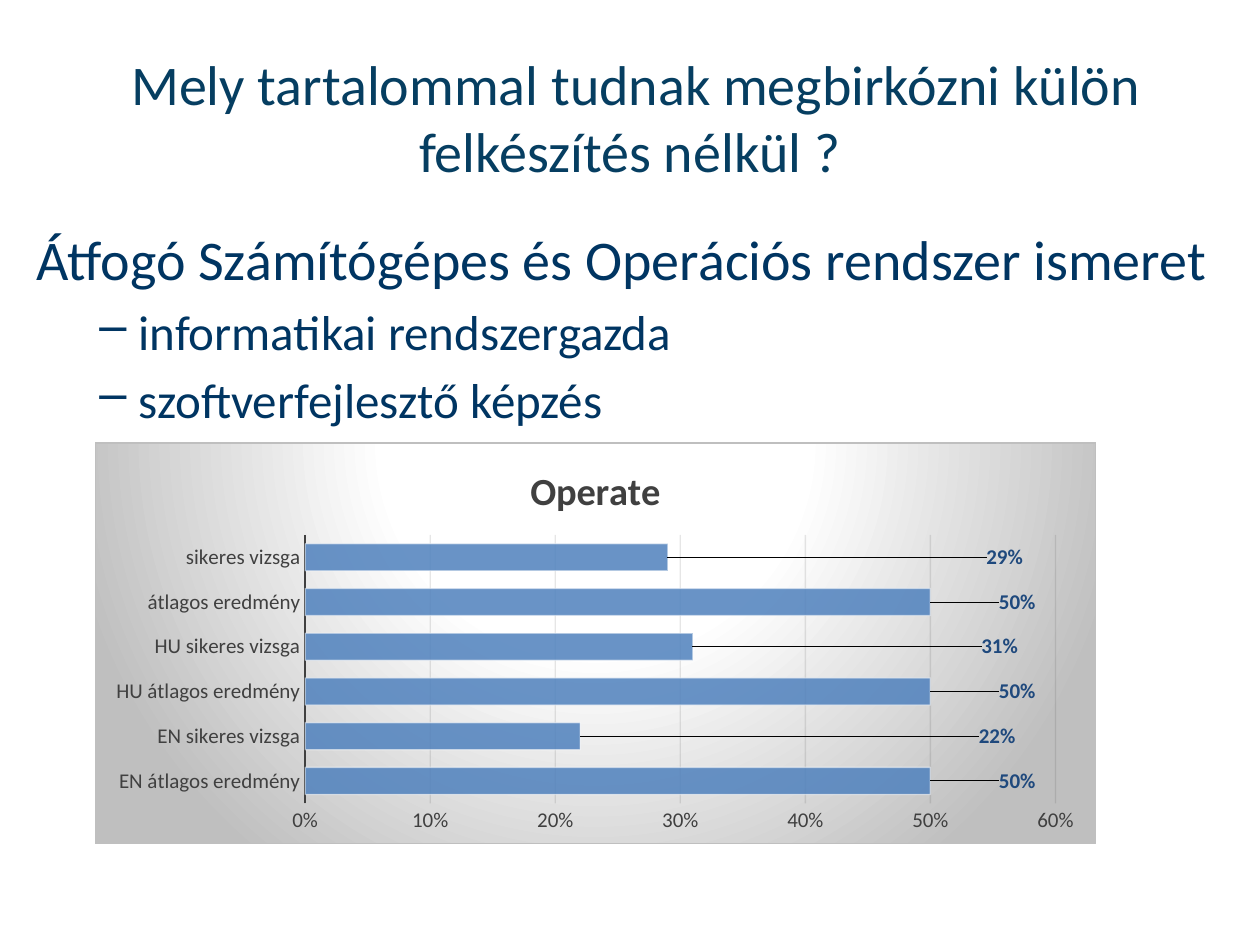
from lxml import etree
from pptx import Presentation
from pptx.chart.data import CategoryChartData
from pptx.dml.color import RGBColor
from pptx.enum.chart import XL_CHART_TYPE as ChartType, XL_LABEL_POSITION as LabelPos
from pptx.enum.chart import XL_TICK_MARK as Tick
from pptx.enum.text import MSO_ANCHOR as Anchor, PP_ALIGN as Align
from pptx.oxml import parse_xml
from pptx.oxml.ns import nsdecls, qn
from pptx.util import Inches, Pt

COLORS = {
    "title": "063E61", "body": "003562", "bar": "4F81BD", "label": "1F497D",
    "axis": "404040", "grid": "0D0D0D", "white": "FFFFFF", "gray": "BFBFBF",
}
FONT = "Calibri"
RESULTS = [
    ("EN átlagos eredmény", 0.5, 0.11), ("EN sikeres vizsga", 0.22, 0.44),
    ("HU átlagos eredmény", 0.5, 0.11), ("HU sikeres vizsga", 0.31, 0.33),
    ("átlagos eredmény", 0.5, 0.11), ("sikeres vizsga", 0.29, 0.36),
]


def rgb(name):
    """Return the named colour."""
    return RGBColor.from_string(COLORS[name])


def set_font(font, size, color, bold=False):
    """Format a font."""
    font.name, font.size, font.bold = FONT, Pt(size), bold
    font.color.rgb = rgb(color)


def set_line(line, color, width):
    """Give a line its colour and width."""
    line.color.rgb = rgb(color)
    line.width = Pt(width)


def set_alpha(element, percent):
    """Make the first colour inside an element translucent."""
    clr = next(element.iter(qn("a:srgbClr")))
    etree.SubElement(clr, qn("a:alpha")).set("val", str(percent * 1000))


def add_text(tf, text, size, color, align=Align.LEFT, first=False, before=0, bullet=None):
    """Write one paragraph, with a hanging bullet if one is given."""
    p = tf.paragraphs[0] if first else tf.add_paragraph()
    p.alignment = align
    p.space_before = Pt(before)
    if bullet:
        pPr = p._p.get_or_add_pPr()
        pPr.set("marL", str(Inches(0.81)))
        pPr.set("indent", str(-Inches(0.31)))
        etree.SubElement(pPr, qn("a:buChar")).set("char", bullet)
    r = p.add_run()
    r.text = text
    set_font(r.font, size, color)


def add_box(s, box, anchor):
    """Add a wrapping text box and return its text frame."""
    tf = s.shapes.add_textbox(*map(Inches, box)).text_frame
    tf.word_wrap = True
    tf.vertical_anchor = anchor
    return tf


def add_title(s, box):
    """Place the slide title."""
    tf = add_box(s, box, Anchor.MIDDLE)
    add_text(tf, " Mely tartalommal tudnak megbirkózni külön felkészítés nélkül ?",
             32, "title", align=Align.CENTER, first=True)


def add_body(s, box):
    """Place the subject and its courses."""
    tf = add_box(s, box, Anchor.TOP)
    add_text(tf, "Átfogó Számítógépes és Operációs rendszer ismeret", 32, "body", first=True)
    for course in ("informatikai rendszergazda", "szoftverfejlesztő képzés"):
        add_text(tf, course, 28, "body", before=5.6, bullet="–")


def layout_xml(**parts):
    """Build a manual chart layout."""
    items = "".join(f'<c:{k} val="{v}"/>' for k, v in parts.items())
    return parse_xml(f'<c:layout {nsdecls("c")}><c:manualLayout>{items}'
                     "</c:manualLayout></c:layout>")


def fill_chart_area(chart):
    """Give the chart area a radial gradient and a border."""
    stops = "".join(
        f'<a:gs pos="{pos * 1000}"><a:srgbClr val="{COLORS[c]}"/></a:gs>'
        for pos, c in ((0, "white"), (39, "white"), (100, "gray")))
    spPr = parse_xml(
        f'<c:spPr {nsdecls("c", "a")}><a:gradFill><a:gsLst>{stops}</a:gsLst>'
        '<a:path path="circle"><a:fillToRect l="50000" t="-80000" r="50000" b="180000"/>'
        f'</a:path></a:gradFill><a:ln w="{Pt(0.75)}"><a:solidFill>'
        f'<a:srgbClr val="{COLORS["gray"]}"/></a:solidFill></a:ln></c:spPr>')
    chart._chartSpace.find(qn("c:chart")).addnext(spPr)


def format_axes(chart):
    """Format both axes and the gridlines."""
    cat, val = chart.category_axis, chart.value_axis
    for axis in (cat, val):
        axis.major_tick_mark = axis.minor_tick_mark = Tick.NONE
        set_font(axis.tick_labels.font, 12, "axis")
    set_line(cat.format.line, "axis", 1.5)
    val.format.line.fill.background()
    val.minimum_scale, val.maximum_scale, val.major_unit = 0, 0.6, 0.1
    val.tick_labels.number_format = "0%"
    val.tick_labels.number_format_is_linked = False
    grid = val.major_gridlines
    set_line(grid.format.line, "grid", 0.75)
    set_alpha(val._element.find(qn("c:majorGridlines")), 10)


def format_bars(plot):
    """Format the bars and shift their labels to the right side."""
    plot.gap_width = 65
    plot.vary_by_categories = False
    series = plot.series[0]
    series.format.fill.solid()
    series.format.fill.fore_color.rgb = rgb("bar")
    set_line(series.format.line, "white", 0.75)
    spPr = series._element.find(qn("c:spPr"))
    set_alpha(spPr.find(qn("a:solidFill")), 85)
    set_alpha(spPr.find(qn("a:ln")), 50)
    labels = series.data_labels
    labels.show_value = True
    labels.number_format, labels.number_format_is_linked = "0%", False
    labels.position = LabelPos.INSIDE_END
    set_font(labels.font, 12, "label", bold=True)
    for i, (_, _, shift) in enumerate(RESULTS):
        label = series.points[i].data_label
        set_font(label.font, 12, "label", bold=True)
        label.position = LabelPos.INSIDE_END
    for dLbl, (_, _, shift) in zip(series._element.iter(qn("c:dLbl")), RESULTS):
        dLbl.find(qn("c:idx")).addnext(layout_xml(x=shift, y=0))


def add_results(s, box):
    """Place the bar chart of exam results."""
    data = CategoryChartData(number_format="0%")
    data.categories = [name for name, _, _ in RESULTS]
    data.add_series("Operate", [value for _, value, _ in RESULTS])
    chart = s.shapes.add_chart(ChartType.BAR_CLUSTERED, *map(Inches, box), data).chart
    chart.font.name, chart.font.size = FONT, Pt(10)
    chart.has_legend = False
    chart.has_title = True
    tf = chart.chart_title.text_frame
    tf.text = "Operate"
    set_font(tf.paragraphs[0].runs[0].font, 22, "axis", bold=True)
    chart.chart_title.include_in_layout = False
    fill_chart_area(chart)
    format_axes(chart)
    format_bars(chart.plots[0])
    area = chart._chartSpace.find(qn("c:chart")).find(qn("c:plotArea"))
    for old in area.findall(qn("c:layout")):
        area.remove(old)
    area.insert(0, layout_xml(layoutTarget="inner", xMode="edge", yMode="edge",
                              x=0.21, y=0.23, w=0.75, h=0.67))


def main():
    """Build the slide and save it."""
    prs = Presentation()
    prs.slide_width, prs.slide_height = Inches(10), Inches(7.5)
    s = prs.slides.add_slide(prs.slide_layouts[6])
    add_title(s, (0.5, 0.3, 9, 1.25))
    add_body(s, (0.19, 1.73, 9.62, 4.95))
    add_results(s, (0.75, 3.51, 7.95, 3.19))
    prs.save("out.pptx")


if __name__ == "__main__":
    main()
